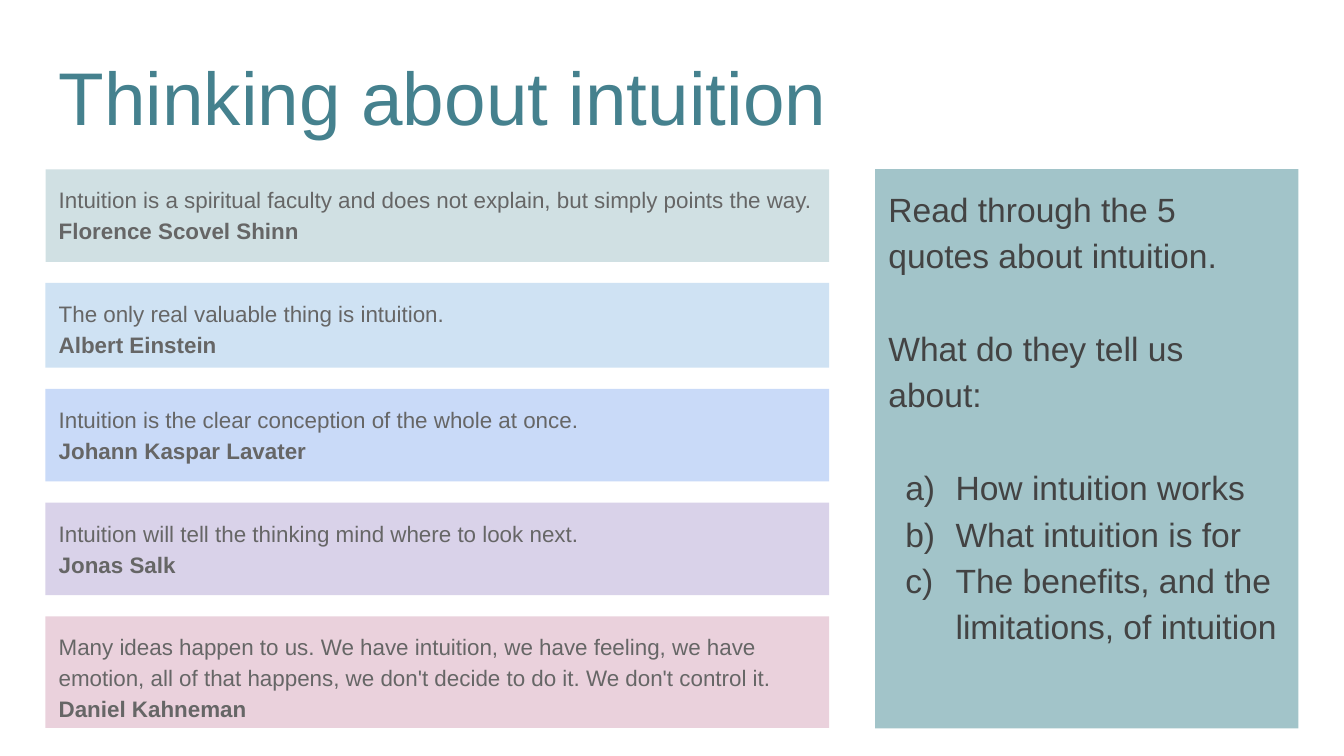
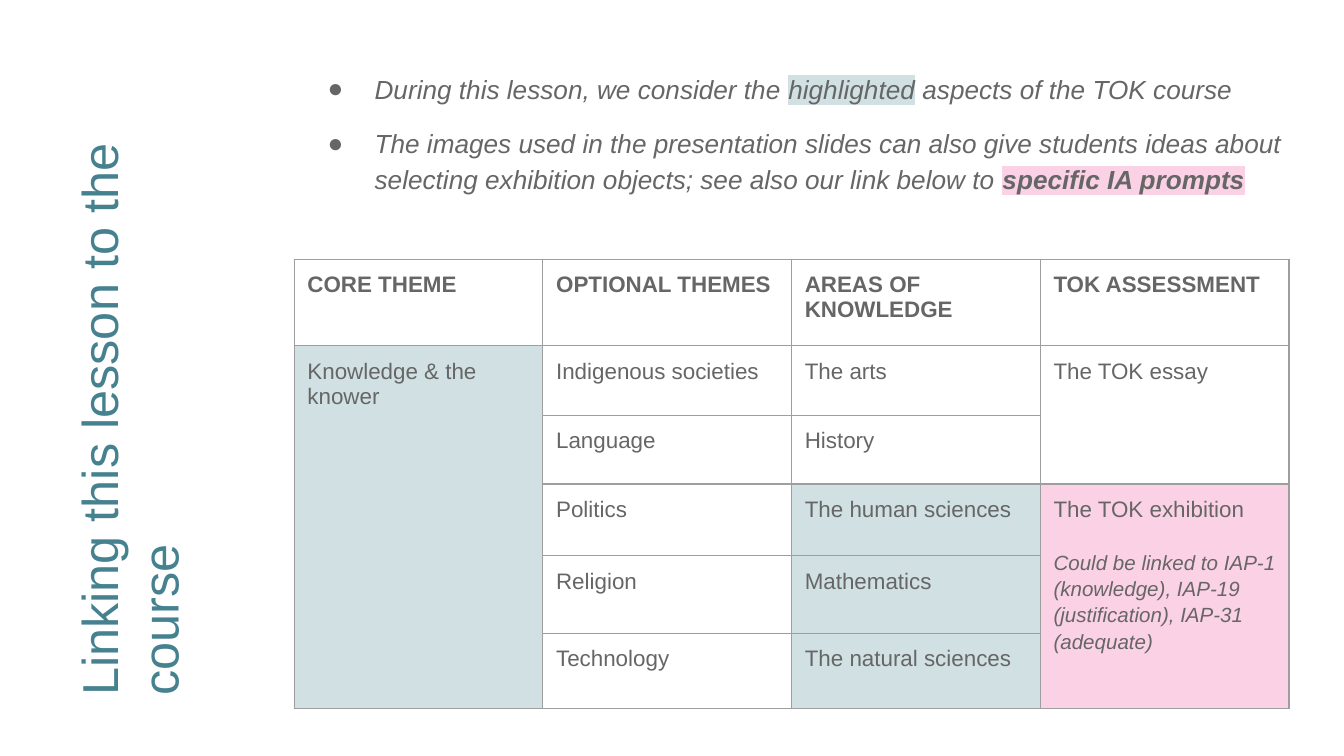
from lxml.etree import SubElement
from pptx import Presentation
from pptx.dml.color import RGBColor
from pptx.enum.shapes import MSO_SHAPE
from pptx.enum.text import MSO_ANCHOR, MSO_AUTO_SIZE, PP_ALIGN
from pptx.oxml.ns import qn
from pptx.util import Cm, Pt

COLORS = {
    "title": "45818E", "text": "666666", "dark": "434343", "white": "FFFFFF",
    "border": "9E9E9E", "mist": "D0E0E3", "sky": "CFE2F3", "blue": "C9DAF8",
    "lilac": "D9D2E9", "rose": "EAD1DC", "sea": "A2C4C9", "pink": "FBD1E6",
}
FONT = "Arial"
MARGIN = Cm(0.25)


def rgb(name):
    return RGBColor.from_string(COLORS[name])


def add_color(parent, tag, name):
    SubElement(SubElement(parent, qn(tag)), qn("a:srgbClr"), val=COLORS[name])


def set_bullet(paragraph, bullet, color, hanging):
    """Use a bullet character, "a)" for lettering, or None for plain text."""
    properties = paragraph._p.get_or_add_pPr()
    properties.set("marL", str(Cm(1.27) if bullet else 0))
    properties.set("indent", str(-Cm(hanging) if bullet else 0))
    if bullet is None:
        SubElement(properties, qn("a:buNone"))
        return
    add_color(properties, "a:buClr", color)
    SubElement(properties, qn("a:buFont"), typeface=FONT)
    if bullet == "a)":
        SubElement(properties, qn("a:buAutoNum"), type="alphaLcParenR")
    else:
        SubElement(properties, qn("a:buChar"), char=bullet)


def add_run(paragraph, text, size, color, bold, italic, highlight=None):
    run = paragraph.add_run()
    run.text = text
    font = run.font
    font.name, font.size, font.bold, font.italic = FONT, Pt(size), bold, italic
    font.color.rgb = rgb(color)
    if highlight:
        properties = run._r.get_or_add_rPr()
        add_color(properties, "a:highlight", highlight)
        properties.find(qn("a:solidFill")).addnext(properties[-1])


def write(frame, text, size=12, color="text", bold=False, italic=False, spacing=1.15,
          before=0, after=0, bullet=None, hanging=0.95):
    """Add a paragraph; text is a string or a list of (string, run format)."""
    paragraph = frame.paragraphs[0]
    if paragraph.runs:
        paragraph = frame.add_paragraph()
    set_bullet(paragraph, bullet, color, hanging)
    paragraph.alignment = PP_ALIGN.LEFT
    paragraph.line_spacing = spacing
    paragraph.space_before, paragraph.space_after = Pt(before), Pt(after)
    for part, changes in [(text, {})] if isinstance(text, str) else text:
        style = {"size": size, "color": color, "bold": bold, "italic": italic}
        add_run(paragraph, part, **(style | changes))


class Deck:
    """Holds the shared style and the current slide."""

    def __init__(self):
        self.presentation = Presentation()
        self.presentation.slide_width = Cm(25.4)
        self.presentation.slide_height = Cm(14.29)
        self.slide = None

    def add_slide(self):
        self.slide = self.presentation.slides.add_slide(self.presentation.slide_layouts[1])

    def place(self, shape, box):
        shape.left, shape.top, shape.width, shape.height = (Cm(length) for length in box)
        frame = shape.text_frame
        frame.word_wrap = True
        frame.auto_size = MSO_AUTO_SIZE.NONE
        frame.vertical_anchor = MSO_ANCHOR.TOP
        frame.margin_left = frame.margin_right = MARGIN
        frame.margin_top = frame.margin_bottom = MARGIN
        return frame

    def title(self, text, box, size, rotation=0):
        shape = self.slide.shapes.title
        write(self.place(shape, box), text, size=size, color="title", spacing=1.0)
        shape.rotation = rotation

    def body(self, box, fill=None):
        shape = self.slide.placeholders[1]
        if fill:
            shape.fill.solid()
            shape.fill.fore_color.rgb = rgb(fill)
        return self.place(shape, box)

    def panel(self, box, fill):
        shape = self.slide.shapes.add_shape(
            MSO_SHAPE.RECTANGLE, *(Cm(length) for length in box))
        shape.shadow.inherit = False
        shape.fill.solid()
        shape.fill.fore_color.rgb = rgb(fill)
        shape.line.fill.background()
        return self.place(shape, box)

    def table(self, left, top, column_width, row_heights, rows, fills, spans):
        columns = len(rows[0])
        table = self.slide.shapes.add_table(
            len(rows), columns, Cm(left), Cm(top),
            Cm(column_width * columns), Cm(sum(row_heights))).table
        table.horz_banding = False
        for column in table.columns:
            column.width = Cm(column_width)
        for row, height in enumerate(row_heights):
            table.rows[row].height = Cm(height)
            for column, text in enumerate(rows[row]):
                cell = table.cell(row, column)
                self.format_cell(cell, fills.get((row, column), "white"))
                if text:
                    write(cell.text_frame, text, bold=row == 0, spacing=1.0)
        for first, last in spans:
            table.cell(*first).merge(table.cell(*last))
        return table

    def format_cell(self, cell, fill):
        cell.margin_left = cell.margin_right = MARGIN
        cell.margin_top = cell.margin_bottom = MARGIN
        properties = cell._tc.get_or_add_tcPr()
        for side in ("a:lnL", "a:lnR", "a:lnT", "a:lnB"):
            line = SubElement(properties, qn(side), w=str(Pt(0.75)))
            add_color(line, "a:solidFill", "border")
        cell.fill.solid()
        cell.fill.fore_color.rgb = rgb(fill)


def build_quotes(deck):
    deck.add_slide()
    deck.title("Thinking about intuition", (0.86, 0.71, 23.67, 1.6), size=40)

    # Column of quotes
    quotes = [
        ("Intuition is a spiritual faculty and does not explain, but simply points the way.",
         "Florence Scovel Shinn", "mist", 1.75),
        ("The only real valuable thing is intuition.", "Albert Einstein", "sky", 1.6),
        ("Intuition is the clear conception of the whole at once.",
         "Johann Kaspar Lavater", "blue", 1.75),
        ("Intuition will tell the thinking mind where to look next.",
         "Jonas Salk", "lilac", 1.75),
        ("Many ideas happen to us. We have intuition, we have feeling, we have emotion, "
         "all of that happens, we don't decide to do it. We don't control it.",
         "Daniel Kahneman", "rose", 2.11),
    ]
    top, gap = 3.2, 0.4
    for index, (quote, author, fill, height) in enumerate(quotes):
        add_box = deck.panel if index else deck.body
        frame = add_box((0.86, top, 14.81, height), fill)
        write(frame, quote)
        write(frame, author, bold=True)
        top += height + gap

    # Task panel
    task = deck.panel((16.54, 3.2, 8, 10.57), "sea")
    style = {"size": 18, "color": "dark"}
    write(task, "Read through the 5 quotes about intuition.", **style)
    write(task, "What do they tell us about:", before=25, **style)
    questions = ["How intuition works", "What intuition is for",
                 "The benefits, and the limitations, of intuition"]
    for index, question in enumerate(questions):
        write(task, question, bullet="a)", before=0 if index else 25, **style)


def build_course_links(deck):
    deck.add_slide()
    deck.title("Linking this lesson to the course", (-3.35, 5.41, 12.37, 3.61),
               size=27, rotation=270)

    # Introduction
    introduction = deck.body((5.56, 1.04, 18.97, 3.1))
    style = {"size": 14, "italic": True, "bullet": "●", "hanging": 0.89}
    write(introduction, [
        ("During this lesson, we consider the ", {}),
        ("highlighted", {"highlight": "mist"}),
        (" aspects of the TOK course", {})], **style)
    write(introduction, [
        ("The images used in the presentation slides can also give students ideas about "
         "selecting exhibition objects; see also our link below to ", {}),
        ("specific IA prompts", {"bold": True, "highlight": "pink"})],
        before=10, after=10, **style)

    # Course table
    rows = [
        ["CORE THEME", "OPTIONAL THEMES", "AREAS OF KNOWLEDGE", "TOK ASSESSMENT"],
        ["Knowledge & the knower", "Indigenous societies", "The arts", "The TOK essay"],
        ["", "Language", "History", ""],
        ["", "Politics", "The human sciences", "The TOK exhibition"],
        ["", "Religion", "Mathematics", ""],
        ["", "Technology", "The natural sciences", ""],
    ]
    fills = {(row, 0): "mist" for row in range(1, 6)}
    fills |= {(row, 2): "mist" for row in range(3, 6)}
    fills |= {(row, 3): "pink" for row in range(3, 6)}
    table = deck.table(
        5.56, 4.9, 4.7, [1.63, 1.32, 1.3, 1.35, 1.47, 1.42], rows, fills,
        spans=[((1, 0), (5, 0)), ((1, 3), (2, 3)), ((3, 3), (5, 3))])
    write(table.cell(3, 3).text_frame,
          "Could be linked to IAP-1 (knowledge), IAP-19 (justification), IAP-31 (adequate)",
          size=11, italic=True, before=14)


def main():
    deck = Deck()
    build_quotes(deck)
    build_course_links(deck)
    deck.presentation.save("out.pptx")


if __name__ == "__main__":
    main()
